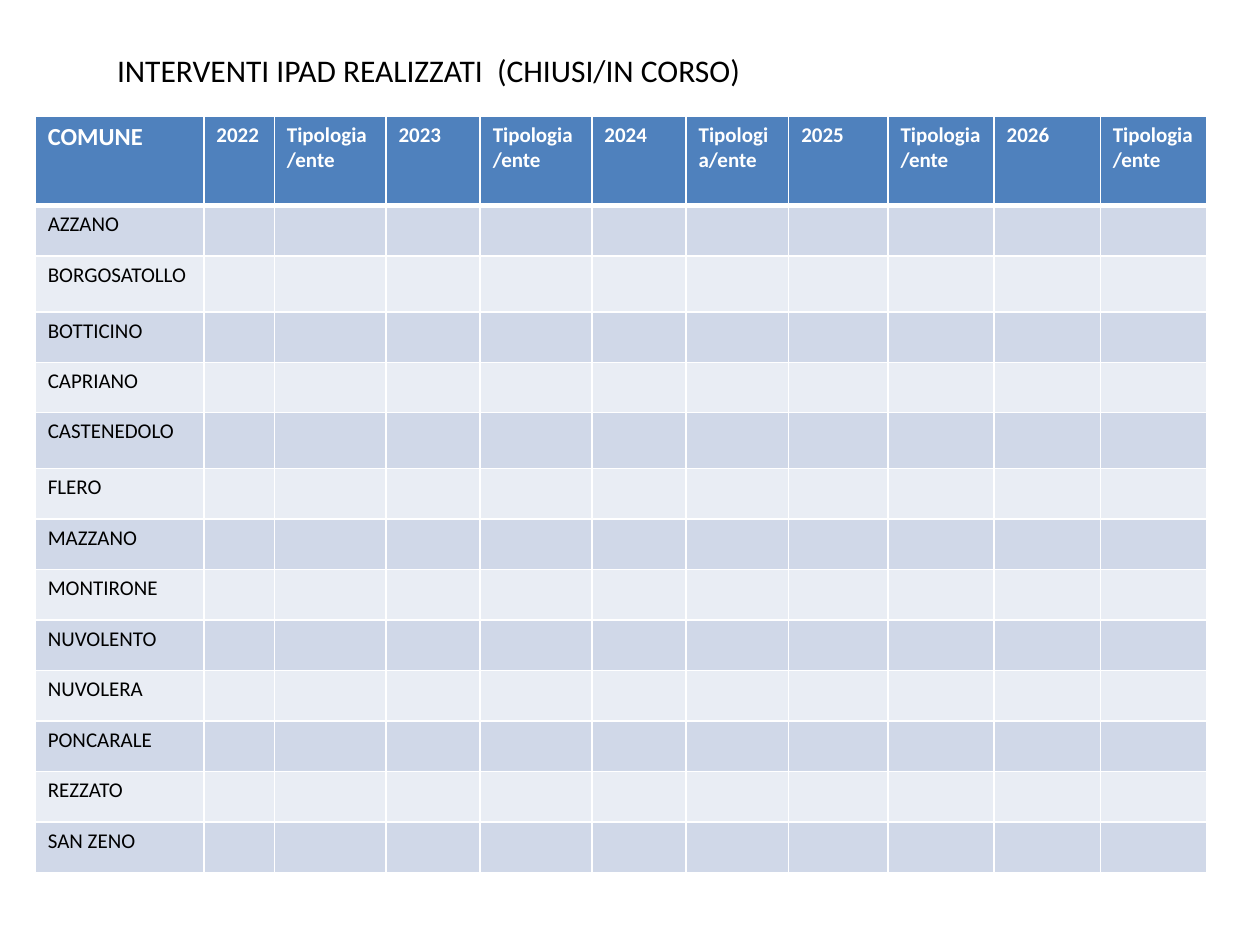
from lxml.etree import SubElement
from pptx import Presentation
from pptx.dml.color import RGBColor
from pptx.enum.text import MSO_AUTO_SIZE
from pptx.oxml.ns import qn
from pptx.util import Cm, Pt

BLACK = RGBColor(0x00, 0x00, 0x00)
WHITE = RGBColor(0xFF, 0xFF, 0xFF)
HEADER_BLUE = RGBColor(0x4F, 0x81, 0xBD)
BAND_DARK = RGBColor(0xD0, 0xD8, 0xE8)
BAND_LIGHT = RGBColor(0xE9, 0xED, 0xF4)

YEARS = range(2022, 2027)
TOWNS = [
    "AZZANO", "BORGOSATOLLO", "BOTTICINO", "CAPRIANO", "CASTENEDOLO",
    "FLERO", "MAZZANO", "MONTIRONE", "NUVOLENTO", "NUVOLERA",
    "PONCARALE", "REZZATO", "SAN ZENO",
]
TALL_ROWS = {"BORGOSATOLLO", "CASTENEDOLO"}
COLUMN_WIDTHS = [3.4, 1.42, 2.25, 1.9, 2.25, 1.9, 2.07, 2, 2.14, 2.14, 2.14]


def write_text(text_frame, text, size=12, color=BLACK, bold=False):
    """Write one formatted line of text into a text frame."""
    run = text_frame.paragraphs[0].add_run()
    run.text = text
    run.font.name = "Calibri"
    run.font.size = Pt(size)
    run.font.bold = bold
    run.font.color.rgb = color


def set_borders(cell, bottom=1, top=1):
    """Draw white lines around a cell, with widths in points."""
    properties = cell._tc.get_or_add_tcPr()
    widths = {"a:lnL": 1, "a:lnR": 1, "a:lnT": top, "a:lnB": bottom}
    for position, (tag, width) in enumerate(widths.items()):
        line = SubElement(properties, qn(tag), w=str(Pt(width)))
        fill = SubElement(line, qn("a:solidFill"))
        SubElement(fill, qn("a:srgbClr"), val=str(WHITE))
        properties.insert(position, line)


def style_cell(cell, color, **borders):
    """Fill a cell and outline it."""
    cell.fill.solid()
    cell.fill.fore_color.rgb = color
    set_borders(cell, **borders)


def add_title(slide, text):
    """Add the slide heading."""
    box = slide.shapes.add_textbox(Cm(2.11), Cm(0.91), Cm(16), Cm(1.03))
    box.text_frame.word_wrap = True
    box.text_frame.auto_size = MSO_AUTO_SIZE.SHAPE_TO_FIT_TEXT
    write_text(box.text_frame, text, size=18)


def add_town_table(slide):
    """Add the table of towns by year and type."""
    headers = ["COMUNE"]
    for year in YEARS:
        headers += [str(year), "Tipologia/ente"]
    table = slide.shapes.add_table(
        len(TOWNS) + 1, len(headers), Cm(0.71), Cm(2.34), Cm(23.6), Cm(15.2)
    ).table
    for column, width in zip(table.columns, COLUMN_WIDTHS):
        column.width = Cm(width)

    table.rows[0].height = Cm(1.8)
    for index, header in enumerate(headers):
        cell = table.cell(0, index)
        style_cell(cell, HEADER_BLUE, bottom=3)
        size = 14 if index == 0 else 12
        write_text(cell.text_frame, header, size=size, color=WHITE, bold=True)

    for index, town in enumerate(TOWNS, start=1):
        row = table.rows[index]
        row.height = Cm(1.13 if town in TALL_ROWS else 1)
        for cell in row.cells:
            style_cell(cell, BAND_DARK if index % 2 else BAND_LIGHT,
                       top=3 if index == 1 else 1)
        write_text(row.cells[0].text_frame, town)


def main():
    """Build and save the slide."""
    presentation = Presentation()
    presentation.slide_width = Cm(25.4)
    presentation.slide_height = Cm(19.05)
    slide = presentation.slides.add_slide(presentation.slide_layouts[6])
    add_title(slide, "INTERVENTI IPAD REALIZZATI  (CHIUSI/IN CORSO)")
    add_town_table(slide)
    presentation.save("out.pptx")


if __name__ == "__main__":
    main()
